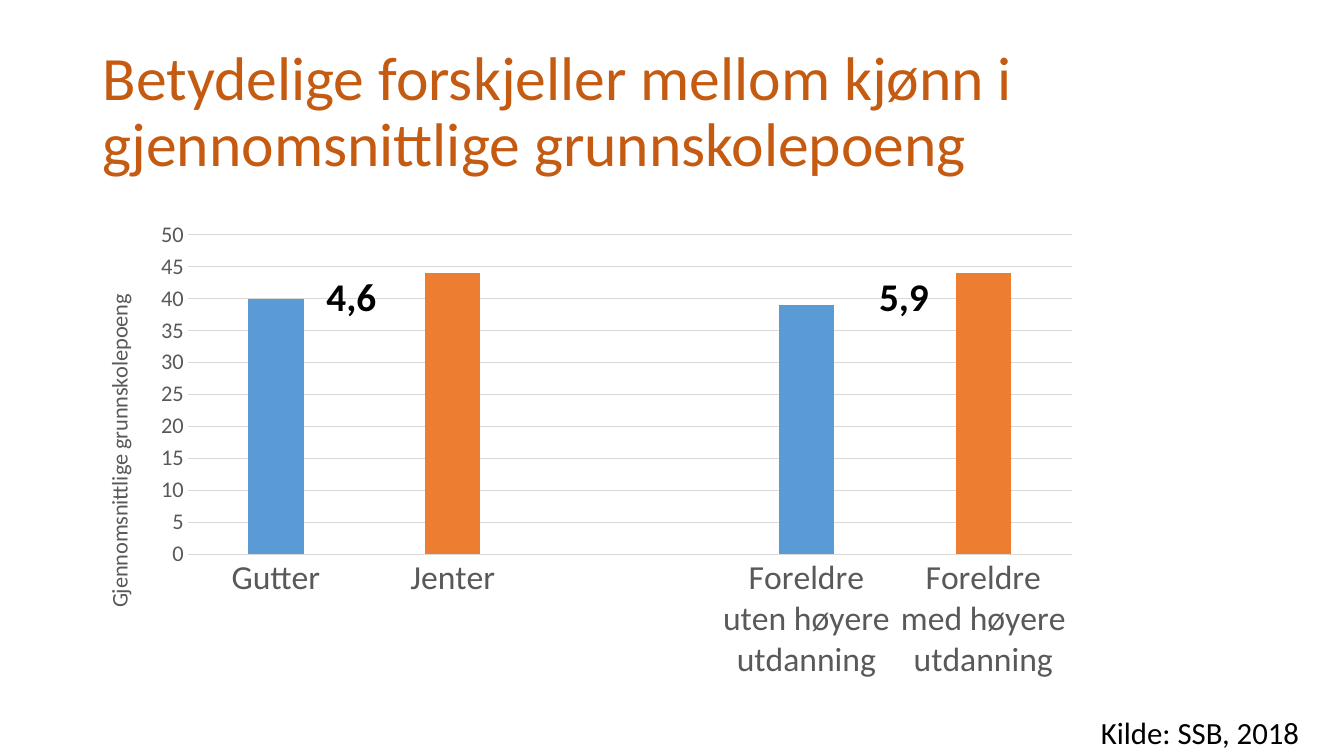
"""Build a slide that compares school points by gender and by parents' education."""
import lxml.etree
import pptx
import pptx.chart.data
import pptx.dml.color
import pptx.enum.chart
import pptx.enum.text
import pptx.oxml.ns
import pptx.util

THEME = {
    "font": "Calibri",
    "head": "C55A11", "ink": "000000", "axis": "595959", "grid": "D9D9D9",
    "blue": "5B9BD5", "orange": "ED7D31",
    "title": 44, "gap": 28, "source": 22, "label": 24, "tick": 16, "base": 10,
}
TITLE = "Betydelige forskjeller mellom kjønn i gjennomsnittlige grunnskolepoeng"
AXIS = "Gjennomsnittlige grunnskolepoeng"
BARS = [
    ("Gutter", 40, "blue"),
    ("Jenter", 44, "orange"),
    ("", None, None),
    ("Foreldre uten høyere utdanning", 39, "blue"),
    ("Foreldre med høyere utdanning", 44, "orange"),
]
NOTES = [
    ("Kilde: SSB, 2018", (10.82, 7.03, 2.58, 0.47), "source", False),
    ("4,6", (3.14, 2.65, 1.54, 0.57), "gap", True),
    ("5,9", (8.62, 2.65, 1.95, 0.57), "gap", True),
]
TITLE_BOX = (0.92, 0.4, 11.5, 1.45)
CHART_BOX = (0.81, 2.09, 10.01, 4.76)
PLOT_BOX = (1.86, 2.33, 8.77, 3.17)
AXIS_SPOT = (0.99, 2.88)


def inches(box):
    return [pptx.util.Inches(v) for v in box]


def color(name):
    return pptx.dml.color.RGBColor.from_string(THEME[name])


def style(font, size, hue, bold=False):
    font.name = THEME["font"]
    font.size = pptx.util.Pt(THEME[size])
    font.color.rgb = color(hue)
    font.bold = bold


def stroke(line, hue):
    line.color.rgb = color(hue)
    line.width = pptx.util.Pt(0.75)


def add_text(slide, text, box, size, hue="ink", bold=False):
    frame = slide.shapes.add_textbox(*inches(box)).text_frame
    frame.word_wrap = True
    para = frame.paragraphs[0]
    run = para.add_run()
    run.text = text
    style(run.font, size, hue, bold)
    return frame


def place(parent, box, index, inner=False):
    """Fix a chart part at slide inches, turned into shares of the chart."""
    qn = pptx.oxml.ns.qn
    for old in parent.findall(qn("c:layout")):
        parent.remove(old)
    left, top, width, height = CHART_BOX
    shares = [(box[0] - left) / width, (box[1] - top) / height]
    shares += [side / whole for side, whole in zip(box[2:], (width, height))]
    rows = [("layoutTarget", "inner")] if inner else []
    rows += [("xMode", "edge"), ("yMode", "edge")]
    rows += [(key, str(val)) for key, val in zip("xywh", shares)]
    layout = lxml.etree.Element(qn("c:layout"))
    manual = lxml.etree.SubElement(layout, qn("c:manualLayout"))
    for tag, val in rows:
        lxml.etree.SubElement(manual, qn("c:" + tag)).set("val", val)
    parent.insert(index, layout)


def add_bars(slide):
    data = pptx.chart.data.CategoryChartData()
    data.categories = [name for name, _, _ in BARS]
    data.add_series("Series 1", [val for _, val, _ in BARS])
    kind = pptx.enum.chart.XL_CHART_TYPE.COLUMN_CLUSTERED
    chart = slide.shapes.add_chart(kind, *inches(CHART_BOX), data).chart
    chart.has_title = False
    chart.has_legend = False
    style(chart.font, "base", "ink")

    plot = chart.plots[0]
    plot.vary_by_categories = False
    plot.gap_width = 219
    plot.overlap = -27
    series = plot.series[0]
    series.invert_if_negative = False
    series.format.fill.solid()
    series.format.fill.fore_color.rgb = color("orange")
    for index, (_, _, hue) in enumerate(BARS):
        if hue:
            fill = series.points[index].format.fill
            fill.solid()
            fill.fore_color.rgb = color(hue)

    cats, vals = chart.category_axis, chart.value_axis
    for axis, size in ((cats, "label"), (vals, "tick")):
        axis.major_tick_mark = pptx.enum.chart.XL_TICK_MARK.NONE
        axis.minor_tick_mark = pptx.enum.chart.XL_TICK_MARK.NONE
        style(axis.tick_labels.font, size, "axis")
    stroke(cats.format.line, "grid")
    vals.format.line.fill.background()
    vals.minimum_scale, vals.maximum_scale, vals.major_unit = 0, 50, 5
    vals.has_major_gridlines = True
    stroke(vals.major_gridlines.format.line, "grid")

    title = vals.axis_title
    run = title.text_frame.paragraphs[0].add_run()
    run.text = AXIS
    style(run.font, "tick", "axis")
    root = title._element
    body = root.find(".//" + pptx.oxml.ns.qn("a:bodyPr"))
    body.set("rot", "-5400000")
    body.set("vert", "horz")
    place(root, AXIS_SPOT, 1)
    area = chart._chartSpace.find(".//" + pptx.oxml.ns.qn("c:plotArea"))
    place(area, PLOT_BOX, 0, inner=True)


def main():
    deck = pptx.Presentation()
    deck.slide_width, deck.slide_height = inches((13.33, 7.5))
    slide = deck.slides.add_slide(deck.slide_layouts[6])
    head = add_text(slide, TITLE, TITLE_BOX, "title", "head")
    head.vertical_anchor = pptx.enum.text.MSO_ANCHOR.MIDDLE
    head.paragraphs[0].line_spacing = 0.9
    add_bars(slide)
    for text, box, size, bold in NOTES:
        frame = add_text(slide, text, box, size, bold=bold)
        frame.auto_size = pptx.enum.text.MSO_AUTO_SIZE.SHAPE_TO_FIT_TEXT
    deck.save("out.pptx")


if __name__ == "__main__":
    main()
